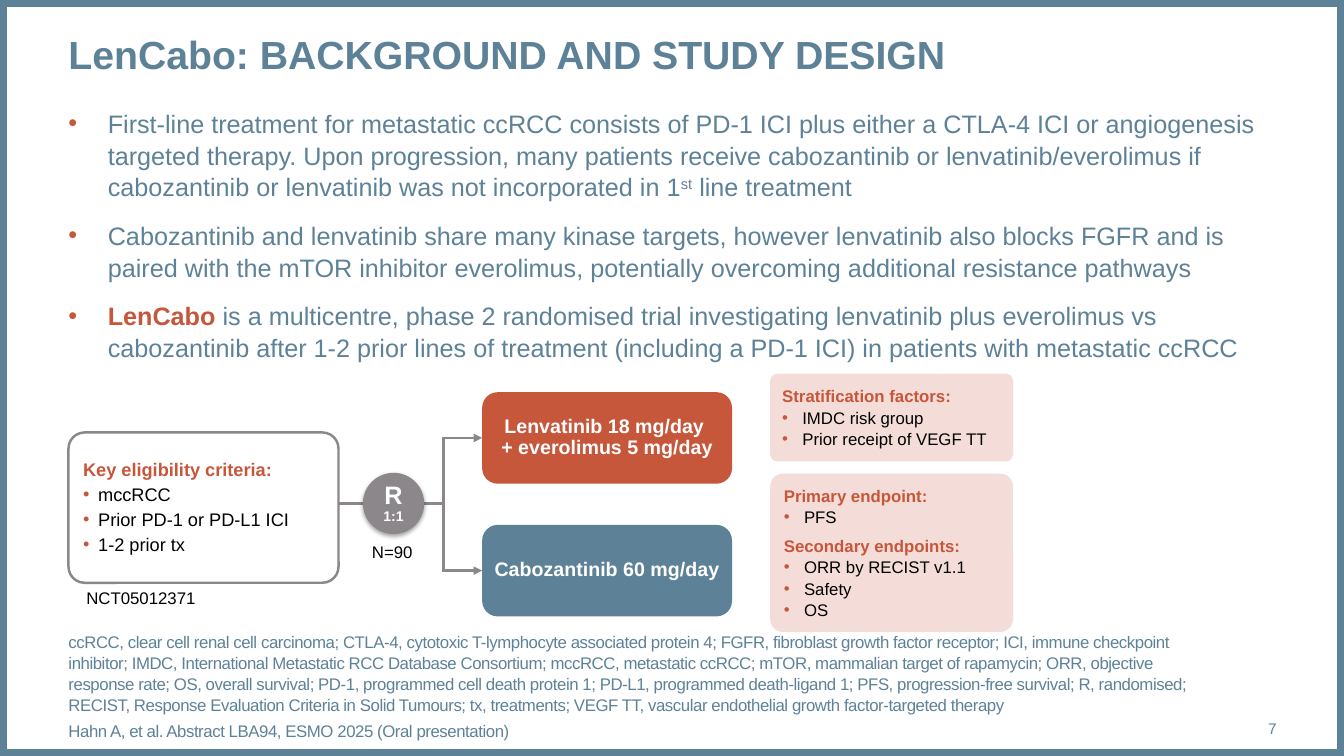
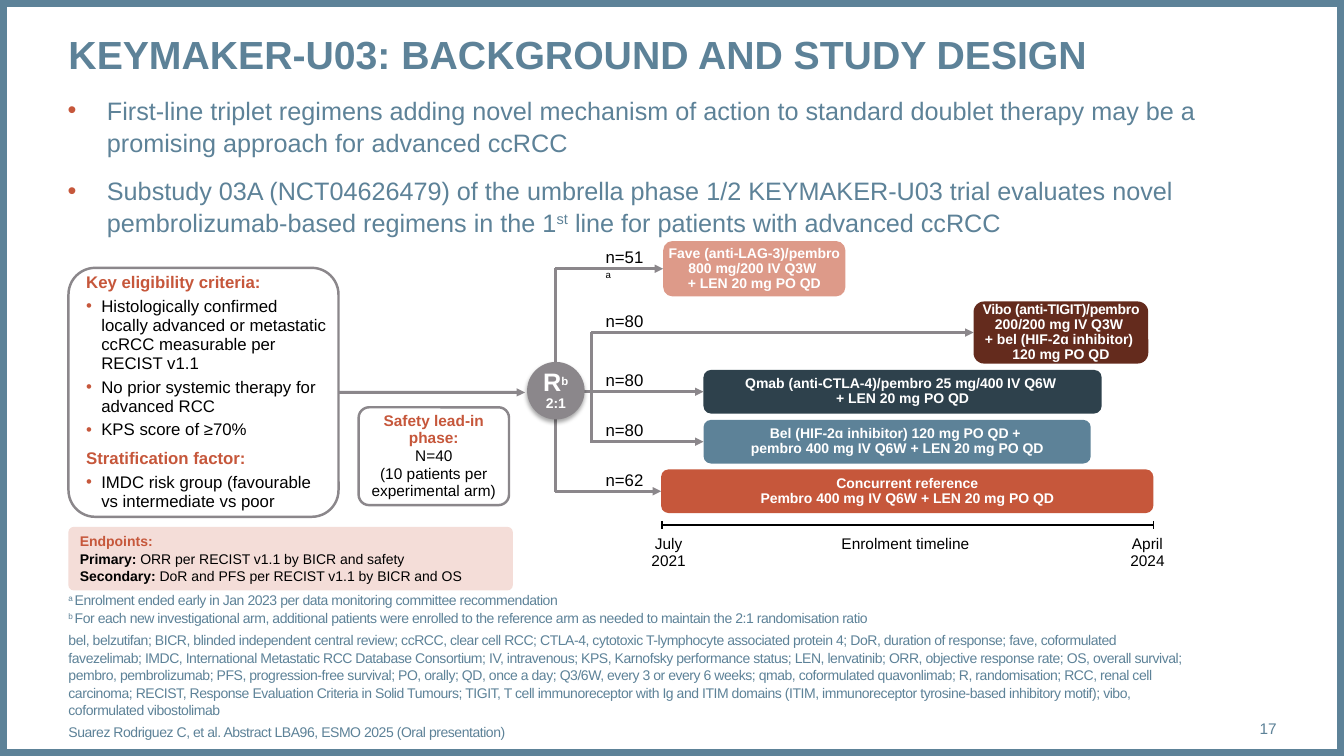
"""Builds two study design slides on a grid of 160 columns by 90 rows."""
import copy
import itertools

import lxml.etree
import pptx
import pptx.dml.color
import pptx.enum.shapes
import pptx.enum.text
import pptx.oxml.ns
import pptx.util

SHAPE = pptx.enum.shapes.MSO_SHAPE
ANCHOR = pptx.enum.text.MSO_ANCHOR
ALIGN = pptx.enum.text.PP_ALIGN
qn = pptx.oxml.ns.qn

WIDTH = pptx.util.Inches(13.33)
HEIGHT = pptx.util.Inches(7.5)
CELL = WIDTH / 160


class Theme:
    font = "Arial"
    blue, accent, grey = "5D8298", "C6573B", "8B878B"
    navy, maroon, salmon, blush = "2E414C", "642B1D", "DD9A89", "F4DDD8"
    black, white = "000000", "FFFFFF"
    title, body, randomise, arm = 28, 18, 18, 14
    criteria, panel, label, number, small = 13, 12, 12, 11, 10
    frame, connector, outline, axis = 10, 2, 1.75, 1
    loose, snug, tight = 1.05, 0.95, 0.9
    body_indent, panel_indent, criteria_indent = 0.39, 0.2, 0.15


ROLES = {
    "title": {"color": Theme.blue, "bold": True},
    "point": {"color": Theme.blue, "bullet": True},
    "note": {"color": Theme.blue},
    "head": {"color": Theme.accent, "bold": True},
    "item": {"color": Theme.black, "bullet": True},
    "label": {"color": Theme.black},
    "white": {"color": Theme.white, "bold": True},
}
TWEAKS = {
    "sup": {"baseline": "30000"},
    "mark": {"baseline": "30000", "size": 14},
    "small": {"size": Theme.small},
    "accent": {"color": Theme.accent, "bold": True},
    "bold": {"bold": True},
    "plain": {"color": Theme.black, "bold": False},
    "narrow": {"spc": "-20"},
}

MARGIN = 8.15
CRITERIA_WIDTH = 32.15
ARM_LABEL_LEFT = 72.1

LENCABO = {
    "title": "LenCabo: BACKGROUND AND STUDY DESIGN",
    "number": "7",
    "points_place": (MARGIN, 12.7, 143.9, 31.7),
    "points": [
        ("point", "First-line treatment for metastatic ccRCC consists of PD-1 ICI plus either a CTLA-4 ICI or angiogenesis targeted therapy. Upon progression, many patients receive cabozantinib or lenvatinib/everolimus if cabozantinib or lenvatinib was not incorporated in 1",
         ("st", "sup"), " line treatment"),
        ("point", "Cabozantinib and lenvatinib share many kinase targets, however lenvatinib also blocks FGFR and is paired with the mTOR inhibitor everolimus, potentially overcoming additional resistance pathways"),
        ("point", ("LenCabo", "accent"), " is a multicentre, phase 2 randomised trial investigating lenvatinib plus everolimus vs cabozantinib after 1-2 prior lines of treatment (including a PD-1 ICI) in patients with metastatic ccRCC"),
    ],
    "notes_size": Theme.label,
    "notes": [
        ("note", "ccRCC, clear cell renal cell carcinoma; CTLA-4, cytotoxic T-lymphocyte associated protein 4; FGFR, fibroblast growth factor receptor; ICI, immune checkpoint inhibitor; IMDC, International Metastatic RCC Database Consortium; mccRCC, metastatic ccRCC; mTOR, mammalian target of rapamycin; ORR, objective response rate; OS, overall survival; PD-1, programmed cell death protein 1; PD-L1, programmed death-ligand 1; PFS, progression-free survival; R, randomised; RECIST, Response Evaluation Criteria in Solid Tumours; tx, treatments; VEGF TT, vascular endothelial growth factor-targeted therapy"),
        ("note", "Hahn A, et al. Abstract LBA94, ESMO 2025 (Oral presentation)"),
    ],
    "criteria_place": (MARGIN, 51.5, CRITERIA_WIDTH, 17.9),
    "criteria_size": Theme.criteria,
    "criteria": [
        ("head", "Key eligibility criteria:"),
        ("item", "mccRCC"),
        ("item", "Prior PD-1 or PD-L1 ICI"),
        ("item", "1-2 prior tx"),
    ],
    "randomise_place": (43.2, 56.3, 7.3, 7.3),
    "randomise": ("white", "R\n", ("1:1", "small")),
    "arm_size": Theme.arm,
    "arms": [
        ((57.4, 46.7, 29.75, 10.9), Theme.accent, 52.8, (), ("Lenvatinib 18 mg/day \n+ everolimus 5 mg/day",)),
        ((57.4, 62.5, 29.75, 10.9), Theme.blue, 52.8, (), ("Cabozantinib 60 mg/day",)),
    ],
    "panels": [
        ((91.7, 44.5, 28.9, 10.45), Theme.panel, [
            ("head", "Stratification factors:"),
            ("item", "IMDC risk group"),
            ("item", "Prior receipt of VEGF TT"),
        ]),
        ((91.7, 56.4, 28.9, 18.85), Theme.panel, [
            ("head", "Primary endpoint:"),
            ("item", "PFS"),
            ("head", "Secondary endpoints:"),
            ("item", "ORR by RECIST v1.1"),
            ("item", "Safety"),
            ("item", "OS"),
        ]),
    ],
}
LENCABO_LABELS = [
    ((9.1, 69.35, 15.5, 3.6), "NCT05012371"),
    ((43.1, 63.95, 7.3, 3.6), "N=90"),
]

KEYMAKER = {
    "title": "KEYMAKER-U03: BACKGROUND AND STUDY DESIGN",
    "number": "17",
    "points_place": (8.05, 11.15, 143.9, 18.4),
    "points": [
        ("point", "First-line triplet regimens adding novel mechanism of action to standard doublet therapy may be a promising approach for advanced ccRCC"),
        ("point", "Substudy 03A (NCT04626479) of the umbrella phase 1/2 KEYMAKER-U03 trial evaluates novel pembrolizumab-based regimens in the 1",
         ("st", "sup"), " line for patients with advanced ccRCC"),
    ],
    "notes_size": Theme.small,
    "notes": [
        ("note", ("a ", "sup"), "Enrolment ended early in Jan 2023 per data monitoring committee recommendation\n",
         ("b ", "sup"), "For each new investigational arm, additional patients were enrolled to the reference arm as needed to maintain the 2:1 randomisation ratio"),
        ("note", "bel, belzutifan; BICR, blinded independent central review; ccRCC, clear cell RCC; CTLA-4, cytotoxic T-lymphocyte associated protein 4; DoR, duration of response; fave, coformulated favezelimab; IMDC, International Metastatic RCC Database Consortium; IV, intravenous; KPS, Karnofsky performance status; LEN, lenvatinib; ORR, objective response rate; OS, overall survival; pembro, pembrolizumab; PFS, progression-free survival; PO, orally; QD, once a day; Q3/6W, every 3 or every 6 weeks; qmab, coformulated quavonlimab; R, randomisation; RCC, renal cell carcinoma; RECIST, Response Evaluation Criteria in Solid Tumours; TIGIT, T cell immunoreceptor with Ig and ITIM domains (ITIM, immunoreceptor tyrosine-based inhibitory motif); vibo, coformulated vibostolimab"),
        ("note", "Suarez Rodriguez C, et al. Abstract LBA96, ESMO 2025 (Oral presentation)"),
    ],
    "criteria_place": (MARGIN, 31.9, CRITERIA_WIDTH, 29.65),
    "criteria_size": Theme.panel,
    "criteria": [
        ("head", "Key eligibility criteria:"),
        ("item", "Histologically confirmed locally advanced or metastatic ccRCC measurable per RECIST v1.1"),
        ("item", "No prior systemic therapy for advanced RCC"),
        ("item", "KPS score of ≥70%"),
        ("head", "Stratification factor:"),
        ("item", "IMDC risk group (favourable vs intermediate vs poor"),
    ],
    "randomise_place": (62.75, 43.1, 6.85, 6.85),
    "randomise": ("white", "R", ("b\n", "mark"), ("2:1", "small")),
    "arm_size": Theme.small,
    "arms": [
        ((78.95, 28.7, 21.7, 6.6), Theme.salmon, 66.1, ("n=51", ("a", "sup")),
         ("Fave (anti-LAG-3)/pembro 800 mg/200 IV Q3W \n+ LEN 20 mg PO QD",)),
        ((115.9, 35.9, 20.8, 7.4), Theme.maroon, 70.4, ("n=80",),
         (("Vibo (anti-TIGIT)/pembro ", "narrow"), "200/200 mg IV Q3W \n+ bel (HIF-2ɑ inhibitor) \n120 mg PO QD")),
        ((83.75, 44.05, 47.4, 5.2), Theme.navy, 64.6, ("n=80",),
         ("Qmab (anti-CTLA-4)/pembro 25 mg/400 IV Q6W \n+ LEN 20 mg PO QD",)),
        ((83.75, 50, 46.1, 5.2), Theme.blue, 70.4, ("n=80",),
         ("Bel (HIF-2ɑ inhibitor) 120 mg PO QD + \npembro 400 mg IV Q6W + LEN 20 mg PO QD",)),
        ((78.7, 55.9, 58.6, 5.2), Theme.accent, 66.1, ("n=62",),
         ("Concurrent reference\nPembro 400 mg IV Q6W + LEN 20 mg PO QD",)),
    ],
    "panels": [
        ((MARGIN, 62.75, 52.9, 7.55), Theme.small, [
            ("head", "Endpoints:"),
            ("label", ("Primary: ", "bold"), "ORR per RECIST v1.1 by BICR and safety\n",
             ("Secondary: ", "bold"), "DoR and PFS per RECIST v1.1 by BICR and OS"),
        ]),
    ],
}
SAFETY_PLACE = (42.7, 48.5, 17.9, 11.65)
SAFETY = ("head", "Safety lead-in\nphase:\n", ("N=40\n(10 patients per\nexperimental arm)", "plain"))
TIMELINE = {"start": 78.8, "end": 137.3, "row": 62.5, "tick": 0.48}
TIMELINE_LABELS = [
    ((76.3, 63.25, 6.6, 5.15), "July\n2021"),
    ((98.75, 63.25, 18.1, 3.25), "Enrolment timeline"),
    ((133.3, 63.25, 6.6, 5.15), "April\n2024"),
]


def cells(*lengths):
    return [round(length * CELL) for length in lengths]


def rgb(color):
    return pptx.dml.color.RGBColor.from_string(color)


def add_bullet(paragraph, indent):
    properties = paragraph._p.get_or_add_pPr()
    step = pptx.util.Inches(indent)
    properties.set("marL", str(step))
    properties.set("indent", str(-step))
    bullet_color = lxml.etree.SubElement(properties, qn("a:buClr"))
    lxml.etree.SubElement(bullet_color, qn("a:srgbClr"), val=Theme.accent)
    lxml.etree.SubElement(properties, qn("a:buFont"), typeface=Theme.font)
    lxml.etree.SubElement(properties, qn("a:buChar"), char="•")


def add_words(paragraph, words, style):
    for index, line in enumerate(words.split("\n")):
        if index:
            paragraph.add_line_break()
            paragraph._p.findall(qn("a:br"))[-1].append(copy.deepcopy(run._r.rPr))
        if line:
            run = paragraph.add_run()
            run.text = line
            run.font.name = Theme.font
            run.font.size = pptx.util.Pt(style["size"])
            run.font.bold = style.get("bold", False)
            run.font.color.rgb = rgb(style["color"])
            for key in ("baseline", "spc"):
                if key in style:
                    run._r.rPr.set(key, style[key])


def write(shape, paragraphs, size, inset=(0, 0, 0, 0), anchor=ANCHOR.MIDDLE, align=ALIGN.LEFT,
          spacing=1.0, before=0, head_before=0, after=0, indent=0, wrap=True, spc="0"):
    frame = shape.text_frame
    frame.word_wrap = wrap
    frame.vertical_anchor = anchor
    frame.margin_left, frame.margin_top, frame.margin_right, frame.margin_bottom = map(pptx.util.Inches, inset)
    for index, (role, *runs) in enumerate(paragraphs):
        paragraph = frame.add_paragraph() if index else frame.paragraphs[0]
        look = ROLES[role]
        if look.get("bullet"):
            add_bullet(paragraph, indent)
        paragraph.alignment = align
        paragraph.line_spacing = spacing
        gap = head_before if role == "head" else before
        paragraph.space_before = pptx.util.Pt(gap if index else 0)
        paragraph.space_after = pptx.util.Pt(after)
        for run in runs:
            words, tweak = (run, None) if isinstance(run, str) else run
            add_words(paragraph, words, {"size": size, "spc": spc, **look, **TWEAKS.get(tweak, {})})


def add_text(slide, place, paragraphs, size, **layout):
    write(slide.shapes.add_textbox(*cells(*place)), paragraphs, size, **layout)


def add_box(slide, place, fill=None, outline=None, weight=0, kind=SHAPE.ROUNDED_RECTANGLE, corner=None):
    box = slide.shapes.add_shape(kind, *cells(*place))
    box.shadow.inherit = False
    if fill:
        box.fill.solid()
        box.fill.fore_color.rgb = rgb(fill)
    else:
        box.fill.background()
    if outline:
        box.line.color.rgb = rgb(outline)
        box.line.width = pptx.util.Pt(weight)
    else:
        box.line.fill.background()
    if corner:
        box.adjustments[0] = corner
    return box


def add_line(slide, start, end, color=Theme.grey, weight=Theme.connector, arrow=False, source=None, target=None):
    line = slide.shapes.add_connector(pptx.enum.shapes.MSO_CONNECTOR.STRAIGHT, *cells(*start, *end))
    if source:
        line.begin_connect(source, 3)
    if target:
        line.end_connect(target, 1)
    line.line.color.rgb = rgb(color)
    line.line.width = pptx.util.Pt(weight)
    properties = line._element.spPr
    if arrow:
        lxml.etree.SubElement(properties.find(qn("a:ln")), qn("a:tailEnd"), type="triangle")
    lxml.etree.SubElement(properties, qn("a:effectLst"))


def add_arms(slide, arms, size):
    stems = {}
    for place, fill, stem, count, regimen in arms:
        left, top, width, height = place
        middle = top + height / 2
        stems.setdefault(stem, []).append(middle)
        box = add_box(slide, place, fill, corner=0.17)
        write(box, [("white", *regimen)], size, (0, 0.05, 0, 0.05), align=ALIGN.CENTER, spacing=Theme.tight)
        add_line(slide, (stem, middle), (left, middle), arrow=True, target=box)
        if count:
            add_text(slide, (ARM_LABEL_LEFT, middle - 2.6, 4.6, 2.4), [("label", *count)], Theme.label,
                     anchor=ANCHOR.TOP, wrap=False)
    for stem, middles in stems.items():
        if len(middles) > 1:
            add_line(slide, (stem, min(middles) - 0.12), (stem, max(middles) + 0.12))


def add_randomisation(slide, place, text):
    circle = add_box(slide, place, Theme.grey, kind=SHAPE.OVAL)
    effects = circle._element.spPr.find(qn("a:effectLst"))
    shadow = lxml.etree.SubElement(effects, qn("a:outerShdw"), blurRad="39370", dist="22860",
                                   dir="5400000", rotWithShape="0")
    color = lxml.etree.SubElement(shadow, qn("a:srgbClr"), val=Theme.black)
    lxml.etree.SubElement(color, qn("a:alpha"), val="35000")
    write(circle, [text], Theme.randomise, (0, 0.05, 0, 0.05), align=ALIGN.CENTER, spacing=Theme.tight)


def add_study(deck, study, trunk_row, trunk_end, joined):
    slide = deck.slides.add_slide(deck.slide_layouts[6])
    add_box(slide, (0, 0, 160, 90), outline=Theme.blue, weight=Theme.frame, kind=SHAPE.RECTANGLE)
    add_text(slide, (MARGIN, 3.35, 143.9, 11.3), [("title", study["title"])], Theme.title,
             anchor=ANCHOR.TOP, spacing=Theme.loose)
    add_text(slide, study["points_place"], study["points"], Theme.body, anchor=ANCHOR.TOP,
             spacing=Theme.loose, before=12, indent=Theme.body_indent)
    add_text(slide, (MARGIN, 83.4, 133.55, 4.8), study["notes"], study["notes_size"],
             anchor=ANCHOR.BOTTOM, spacing=Theme.loose, before=3, spc="-30")
    add_text(slide, (141.7, 84.35, 10.3, 4.8), [("note", study["number"])], Theme.number, align=ALIGN.RIGHT)
    criteria = add_box(slide, study["criteria_place"], Theme.white, Theme.grey, Theme.outline, corner=0.107)
    write(criteria, study["criteria"], study["criteria_size"], (0.1, 0.05, 0.04, 0.05),
          spacing=Theme.snug, head_before=4, after=3, indent=Theme.criteria_indent)
    add_line(slide, (MARGIN + CRITERIA_WIDTH, trunk_row), (trunk_end, trunk_row), arrow=joined,
             source=criteria if joined else None)
    add_arms(slide, study["arms"], study["arm_size"])
    add_randomisation(slide, study["randomise_place"], study["randomise"])
    for place, size, paragraphs in study["panels"]:
        write(add_box(slide, place, Theme.blush, corner=0.08), paragraphs, size, (0.1, 0.05, 0.1, 0.05),
              head_before=5, after=1, indent=Theme.panel_indent)
    return slide


def add_timeline(slide):
    start, end, row, tick = TIMELINE.values()
    spans = [((start, row), (end, row))] + [((x, row - tick), (x, row + tick)) for x in (start, end)]
    for begin, finish in spans:
        add_line(slide, begin, finish, Theme.black, Theme.axis)
    for place, words in TIMELINE_LABELS:
        add_text(slide, place, [("label", words)], Theme.number, inset=(0.1, 0.05, 0.1, 0.05),
                 anchor=ANCHOR.TOP, align=ALIGN.CENTER, spacing=Theme.tight, wrap=False)


def main():
    deck = pptx.Presentation()
    deck.slide_width, deck.slide_height = WIDTH, HEIGHT
    lencabo = add_study(deck, LENCABO, 60, 52.8, False)
    for place, words in LENCABO_LABELS:
        add_text(lencabo, place, [("label", words)], Theme.label, inset=(0.1, 0.05, 0.1, 0.05),
                 anchor=ANCHOR.TOP, wrap=False)
    keymaker = add_study(deck, KEYMAKER, 46.73, 62.5, True)
    safety = add_box(keymaker, SAFETY_PLACE, Theme.white, Theme.grey, Theme.outline, corner=0.107)
    write(safety, [SAFETY], Theme.number, (0, 0.05, 0, 0.05), align=ALIGN.CENTER, spacing=Theme.snug, after=3)
    add_timeline(keymaker)
    deck.save("out.pptx")


if __name__ == "__main__":
    main()
